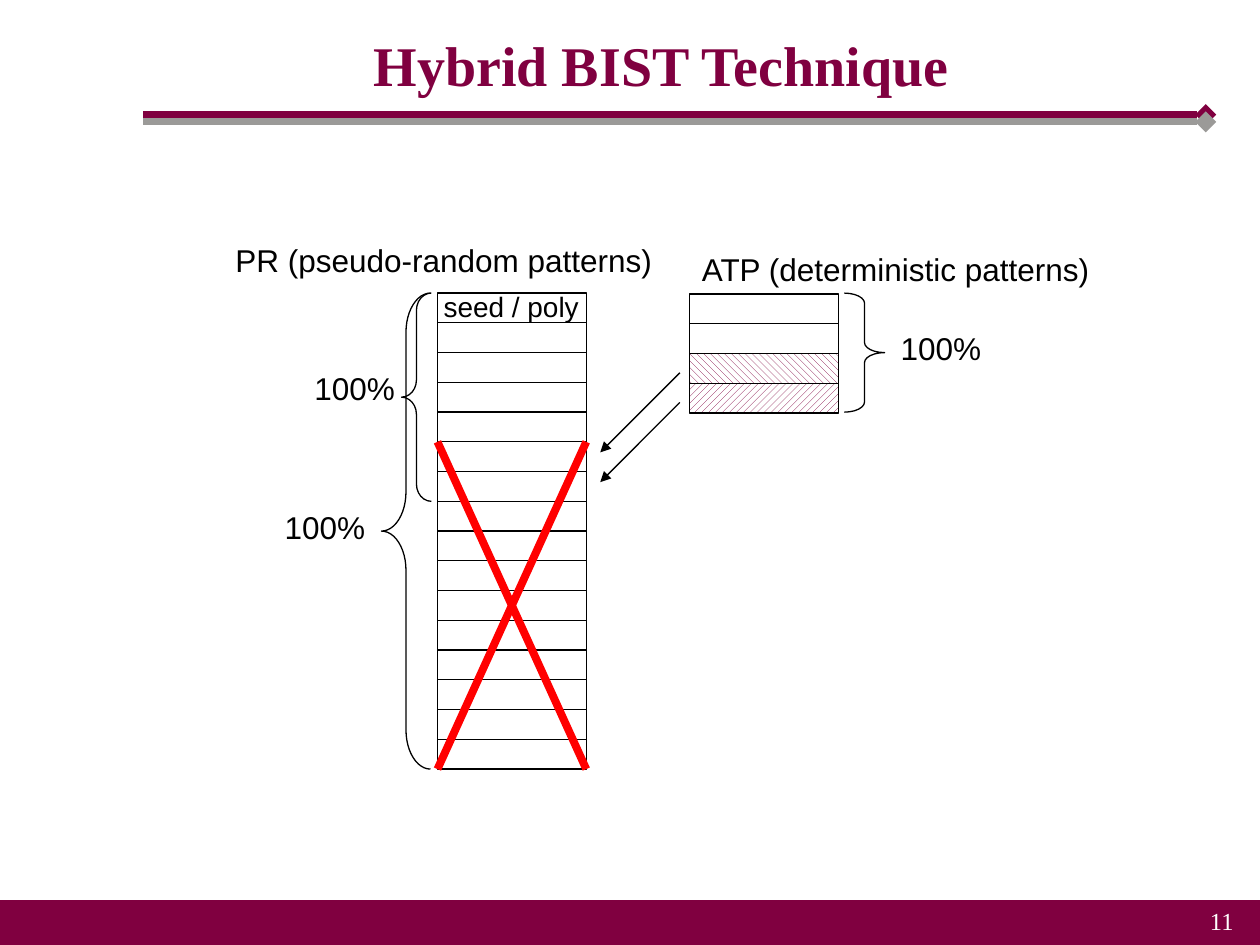
from lxml import etree
from pptx import Presentation
from pptx import util as u
from pptx.dml.color import RGBColor
from pptx.enum import dml, shapes, text
from pptx.oxml import ns

MAROON = RGBColor(0x80, 0x00, 0x40)
GRAY = RGBColor(0x9B, 0x9A, 0x98)
RED = RGBColor(0xFF, 0x00, 0x00)
BLACK = RGBColor(0x00, 0x00, 0x00)
WHITE = RGBColor(0xFF, 0xFF, 0xFF)

SHAPE = shapes.MSO_SHAPE
ALIGN = text.PP_ALIGN
ANCHOR = text.MSO_ANCHOR
PATTERN = dml.MSO_PATTERN

ROW_W, ROW_H = 85, 17
PR_X, PR_Y, PR_ROWS, KEPT_ROWS = 250, 167.5, 16, 5
ATP_X, ATP_Y = 394, 168


def write(tf, content, size=18, font="Arial", color=BLACK, bold=False,
          align=ALIGN.LEFT, anchor=ANCHOR.TOP):
    tf.word_wrap = True
    tf.vertical_anchor = anchor
    p = tf.paragraphs[0]
    p.alignment = align
    r = p.add_run()
    r.text = content
    r.font.size, r.font.name, r.font.bold = u.Pt(size), font, bold
    r.font.color.rgb = color


class Deck:
    """Style and current slide, with one method per kind of element."""

    def __init__(self, slide, line_width=0.75):
        self.s = slide
        self.line_width = line_width

    def text(self, x, y, w, h, content, **fmt):
        sp = self.s.shapes.add_textbox(u.Pt(x), u.Pt(y), u.Pt(w), u.Pt(h))
        write(sp.text_frame, content, **fmt)

    def shape(self, kind, x, y, w, h, fill=None, pattern=None, line=BLACK, curve=None):
        sp = self.s.shapes.add_shape(kind, u.Pt(x), u.Pt(y), u.Pt(w), u.Pt(h))
        sp.shadow.inherit = False
        sp.line.color.rgb = line
        sp.line.width = u.Pt(self.line_width)
        if pattern is not None:
            sp.fill.patterned()
            sp.fill.pattern = pattern
            sp.fill.fore_color.rgb = MAROON
            sp.fill.back_color.rgb = WHITE
        elif fill is not None:
            sp.fill.solid()
            sp.fill.fore_color.rgb = fill
        else:
            sp.fill.background()
        if curve is not None:
            sp.adjustments[0] = curve

    def line(self, x1, y1, x2, y2, color=BLACK, width=None, tail=None):
        sp = self.s.shapes.add_connector(
            shapes.MSO_CONNECTOR.STRAIGHT, u.Pt(x1), u.Pt(y1), u.Pt(x2), u.Pt(y2))
        sp.line.color.rgb = color
        sp.line.width = u.Pt(width or self.line_width)
        if tail:
            ln = sp.line._get_or_add_ln()
            etree.SubElement(ln, ns.qn("a:tailEnd"), type=tail)
        etree.SubElement(sp._element.spPr, ns.qn("a:effectLst"))

    def rows(self, x, y, patterns):
        for i, pattern in enumerate(patterns):
            self.shape(SHAPE.RECTANGLE, x, y + i * ROW_H, ROW_W, ROW_H, pattern=pattern)


def main():
    prs = Presentation()
    prs.slide_width, prs.slide_height = u.Pt(720), u.Pt(540)
    d = Deck(prs.slides.add_slide(prs.slide_layouts[6]))

    for y, color in ((65.5, MAROON), (69.7, GRAY)):
        d.line(82, y, 689, y, color, 4, "diamond")
    d.shape(SHAPE.RECTANGLE, 0, 514.5, 720, 26, fill=MAROON, line=MAROON)
    d.text(620.5, 514, 91.5, 37.5, "11", size=14, font="Times New Roman",
           color=WHITE, align=ALIGN.RIGHT)
    d.text(54, 0, 648, 73, "Hybrid BIST Technique", size=32, font="Times New Roman",
           color=MAROON, bold=True, align=ALIGN.CENTER, anchor=ANCHOR.MIDDLE)

    d.rows(PR_X, PR_Y, [None] * PR_ROWS)
    d.text(127.5, 134, 260.5, 29, "PR (pseudo-random patterns)")
    d.text(246.5, 162, 108, 26.5, "seed / poly", size=16)
    left, right = PR_X, PR_X + ROW_W
    top, bottom = PR_Y + KEPT_ROWS * ROW_H, PR_Y + PR_ROWS * ROW_H
    for x1, x2 in ((left, right), (right, left)):
        d.line(x1, top, x2, bottom, RED, 4.5)

    d.rows(ATP_X, ATP_Y, [None, None, PATTERN.WIDE_DOWNWARD_DIAGONAL,
                          PATTERN.WIDE_UPWARD_DIAGONAL])
    d.text(394, 139.5, 253, 29, "ATP (deterministic patterns)")
    for y in (213, 230):
        d.line(388.5, y, 343, y + 45.5, tail="triangle")

    for kind, x, w, h, curve in (
            (SHAPE.LEFT_BRACE, 218, 28, PR_ROWS * ROW_H, 0.8),
            (SHAPE.LEFT_BRACE, 229.5, 17, 7 * ROW_H, 0.58),
            (SHAPE.RIGHT_BRACE, 482.5, 23, 4 * ROW_H, 0.25)):
        d.shape(kind, x, PR_Y, w, h, curve=curve)
    for x, y in ((155.5, 286.5), (172.5, 207.5), (507.5, 184.5)):
        d.text(x, y, 62.5, 29, "100%")

    prs.save("out.pptx")


if __name__ == "__main__":
    main()
